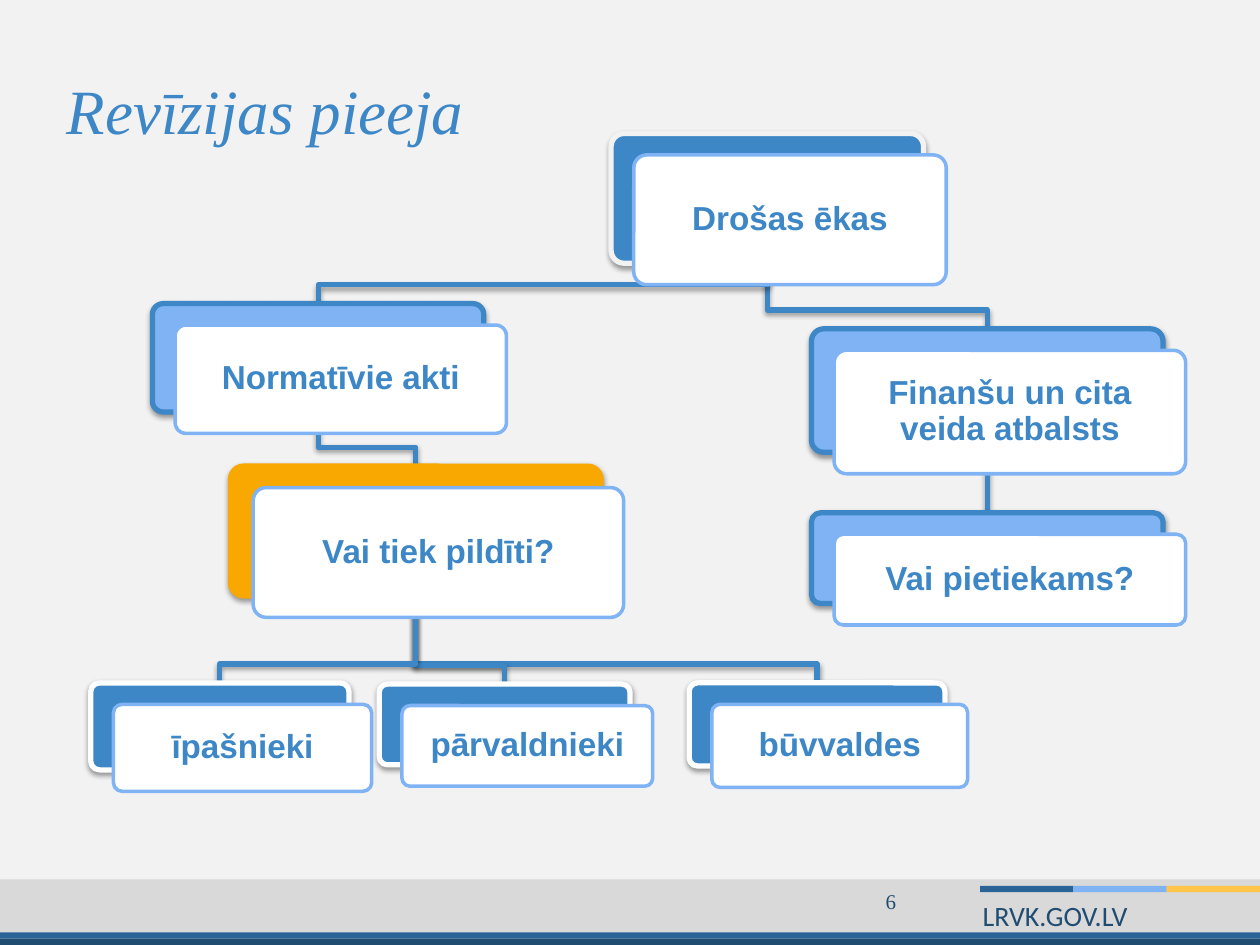
from lxml.etree import SubElement
from pptx import Presentation
from pptx.dml.color import RGBColor
from pptx.enum.shapes import MSO_SHAPE
from pptx.enum.text import MSO_ANCHOR, PP_ALIGN
from pptx.oxml.ns import qn
from pptx.util import Inches, Pt

BLUE = RGBColor(0x3D, 0x87, 0xC7)
LIGHT = RGBColor(0x7F, 0xB3, 0xF4)
NAVY = RGBColor(0x20, 0x4C, 0x72)
STEEL = RGBColor(0x2A, 0x64, 0x96)
AMBER = RGBColor(0xF8, 0xA8, 0x00)
YELLOW = RGBColor(0xFF, 0xC5, 0x4B)
PALE = RGBColor(0xF2, 0xF2, 0xF2)
GREY = RGBColor(0xD9, 0xD9, 0xD9)
WHITE = RGBColor(0xFF, 0xFF, 0xFF)

TITLE = "Revīzijas pieeja"
SITE = "LRVK.GOV.LV"
PAGE = "6"
CARDS = {
    "goal": ("Drošas ēkas", (4.85, 1.06, 2.48, 1.03), BLUE, PALE),
    "rules": ("Normatīvie akti", (1.21, 2.41, 2.63, 0.86), LIGHT, BLUE),
    "followed": ("Vai tiek pildīti?", (1.83, 3.7, 2.94, 1.03), AMBER, AMBER),
    "owners": ("īpašnieki", (0.72, 5.42, 2.05, 0.69), BLUE, WHITE),
    "managers": ("pārvaldnieki", (3.01, 5.43, 1.99, 0.64), BLUE, WHITE),
    "boards": ("būvvaldes", (5.47, 5.42, 2.03, 0.66), BLUE, WHITE),
    "support": ("Finanšu un cita veida atbalsts", (6.44, 2.61, 2.79, 0.98), LIGHT, BLUE),
    "enough": ("Vai pietiekams?", (6.44, 4.07, 2.79, 0.72), LIGHT, BLUE),
}
LINKS = [
    ("support", "enough"), ("goal", "support"), ("followed", "boards"),
    ("followed", "managers"), ("followed", "owners"), ("rules", "followed"),
    ("goal", "rules"),
]
STRIPES = [STEEL, LIGHT, YELLOW]
STRIPE_W = 0.74
OFFSET = 0.18
ELBOW = 0.15
INSET = 0.11


def add_shadow(sp):
    effects = sp.element.spPr.find(qn("a:effectLst"))
    shadow = SubElement(effects, qn("a:outerShdw"), blurRad=str(Pt(3.1)),
                        dist=str(Pt(1.6)), dir="5400000", rotWithShape="0")
    color = SubElement(shadow, qn("a:srgbClr"), val="000000")
    SubElement(color, qn("a:alpha"), val="38000")


def add_box(s, kind, box, fill, line=None, width=0):
    sp = s.shapes.add_shape(kind, *map(Inches, box))
    sp.fill.solid()
    sp.fill.fore_color.rgb = fill
    if line is None:
        sp.line.fill.background()
    else:
        sp.line.color.rgb = line
        sp.line.width = Pt(width)
    sp.shadow.inherit = False
    return sp


def write(tf, text, font, size, color, align=PP_ALIGN.LEFT):
    tf.word_wrap = True
    p = tf.paragraphs[0]
    p.text = text
    p.alignment = align
    p.font.name = font
    p.font.size = Pt(size)
    p.font.color.rgb = color
    return p


def add_label(s, box, *style, anchor=MSO_ANCHOR.TOP):
    tf = s.shapes.add_textbox(*map(Inches, box)).text_frame
    tf.vertical_anchor = anchor
    write(tf, *style)


def add_link(s, parent, child):
    x1, y1, w1, h1 = CARDS[parent][1]
    x2, y2, w2, _ = CARDS[child][1]
    start, end = x1 + w1 / 2, x2 + w2 / 2
    points = [(start, y1 + h1), (start, y2 - ELBOW), (end, y2 - ELBOW), (end, y2)]
    points = [(Inches(x), Inches(y)) for x, y in points]
    fb = s.shapes.build_freeform(*points[0])
    fb.add_line_segments(points[1:], close=False)
    sp = fb.convert_to_shape()
    sp.fill.background()
    sp.line.color.rgb = BLUE
    sp.line.width = Pt(3)
    sp.shadow.inherit = False
    add_shadow(sp)


def add_card(s, text, box, fill, line):
    x, y, w, h = box
    back = add_box(s, MSO_SHAPE.ROUNDED_RECTANGLE, box, fill, line, 3)
    add_shadow(back)
    front = add_box(s, MSO_SHAPE.ROUNDED_RECTANGLE,
                    (x + OFFSET, y + OFFSET - 0.01, w, h), WHITE, LIGHT, 2)
    back.adjustments[0] = front.adjustments[0] = 0.1
    tf = front.text_frame
    tf.margin_left = tf.margin_right = tf.margin_top = tf.margin_bottom = Inches(INSET)
    tf.vertical_anchor = MSO_ANCHOR.MIDDLE
    p = write(tf, text, "Arial", 19, BLUE, PP_ALIGN.CENTER)
    p.font.bold = True
    p.line_spacing = 0.9


def main():
    prs = Presentation()
    prs.slide_width, prs.slide_height = Inches(10), Inches(7.5)
    s = prs.slides.add_slide(prs.slide_layouts[5])
    s.background.fill.solid()
    s.background.fill.fore_color.rgb = PALE

    add_box(s, MSO_SHAPE.RECTANGLE, (0, 6.98, 10, 0.44), GREY)
    for i, color in enumerate(STRIPES):
        x = 10 - (len(STRIPES) - i) * STRIPE_W
        add_box(s, MSO_SHAPE.RECTANGLE, (x, 7.03, STRIPE_W, 0.05), color)
    add_label(s, (7.7, 7.08, 1.95, 0.37), SITE, "Calibri", 16, NAVY)
    add_box(s, MSO_SHAPE.RECTANGLE, (0, 7.45, 10, 0.05), NAVY)
    add_box(s, MSO_SHAPE.RECTANGLE, (0, 7.4, 10, 0.05), STEEL)

    title = s.shapes.title
    title.left, title.top, title.width, title.height = map(Inches, (0.43, 0.44, 9, 0.85))
    title.text_frame.vertical_anchor = MSO_ANCHOR.MIDDLE
    write(title.text_frame, TITLE, "Times New Roman", 36, BLUE).font.italic = True
    add_label(s, (6.5, 6.95, 0.71, 0.4), PAGE, "Times New Roman", 12, NAVY,
              PP_ALIGN.RIGHT, anchor=MSO_ANCHOR.MIDDLE)

    for parent, child in LINKS:
        add_link(s, parent, child)
    for card in CARDS.values():
        add_card(s, *card)
    prs.save("out.pptx")


if __name__ == "__main__":
    main()
